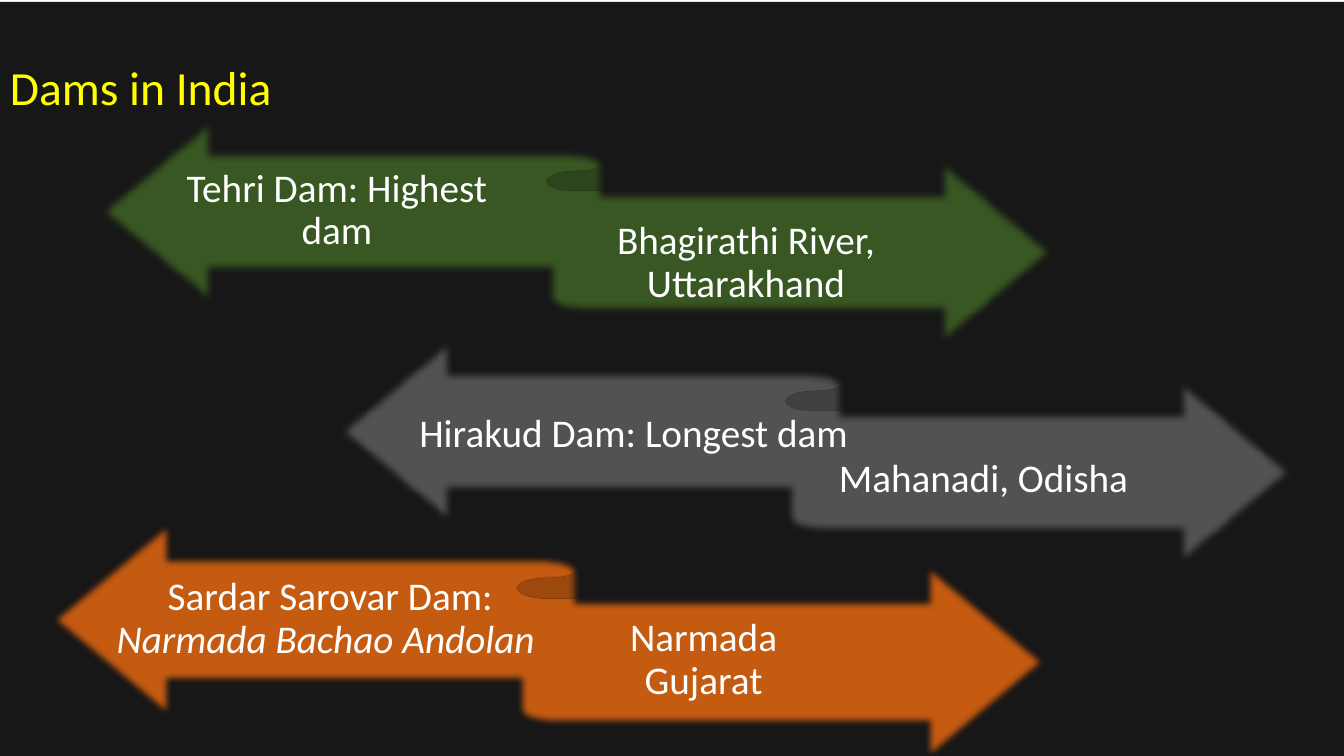
from lxml import etree
from pptx import Presentation
from pptx.dml.color import RGBColor
from pptx.enum import shapes, text
from pptx.oxml import ns
from pptx.util import Pt

COLOURS = {
    "background": "181717", "title": "FFFF00", "label": "FFFFFF",
    "green": "385723", "grey": "525252", "orange": "C55A11",
}


def add_filled_shape(kind, box, colour):
    shape = slide.shapes.add_shape(kind, *(Pt(value) for value in box))
    shape.shadow.inherit = False
    shape.fill.solid()
    shape.fill.fore_color.rgb = RGBColor.from_string(COLOURS[colour])
    shape.line.fill.background()
    return shape


def add_run(paragraph, words, size, colour, italic=False):
    run = paragraph.add_run()
    run.text = words
    run.font.name = "Calibri"
    run.font.size = Pt(size)
    run.font.italic = italic
    run.font.color.rgb = RGBColor.from_string(COLOURS[colour])


presentation = Presentation()
presentation.slide_width, presentation.slide_height = Pt(960), Pt(540)
slide = presentation.slides.add_slide(presentation.slide_layouts[6])

# Dark panel carrying the title
panel = add_filled_shape(shapes.MSO_SHAPE.RECTANGLE, (0, 1.44, 960, 540), "background")
frame = panel.text_frame
frame.word_wrap = True
frame.vertical_anchor = text.MSO_ANCHOR.TOP
frame.margin_top = Pt(44.4)
title = frame.paragraphs[0]
title.alignment = text.PP_ALIGN.LEFT
title.line_spacing = 0.9
add_run(title, "Dams in India", 34, "title")

# Each ribbon: colour, box, then labels as (box, runs of words and italic)
ribbons = [
    ("green", (66.2, 78.5, 690.5, 174.2), [
        ((106.6, 133.2, 268, 35.3), [("Tehri Dam: Highest dam", False)]),
        ((405.4, 145.4, 254.9, 85.7), [("Bhagirathi River, Uttarakhand", False)]),
    ]),
    ("grey", (236.9, 235.4, 690.5, 174.2), [
        ((293, 267.8, 319, 85.7), [("Hirakud Dam: Longest dam", False)]),
        ((563.8, 300.2, 283.7, 85.7), [("Mahanadi, Odisha ", False)]),
    ]),
    ("orange", (32.4, 367.2, 718.6, 181.4), [
        ((66.2, 398.2, 339.1, 88.6),
         [("Sardar Sarovar Dam: ", False), ("Narmada Bachao Andolan ", True)]),
        ((414, 427.7, 177.1, 88.6), [("Narmada Gujarat", False)]),
    ]),
]

for colour, ribbon_box, labels in ribbons:
    ribbon = add_filled_shape(shapes.MSO_SHAPE.LEFT_RIGHT_RIBBON, ribbon_box, colour)
    effects = ribbon.element.spPr.find(ns.qn("a:effectLst"))
    etree.SubElement(effects, ns.qn("a:softEdge"), rad=str(Pt(5)))

    for label_box, runs in labels:
        label = slide.shapes.add_textbox(*(Pt(value) for value in label_box))
        frame = label.text_frame
        frame.word_wrap = True
        frame.vertical_anchor = text.MSO_ANCHOR.MIDDLE
        frame.margin_left = frame.margin_right = 0
        frame.margin_top, frame.margin_bottom = Pt(8), Pt(8.5)
        paragraph = frame.paragraphs[0]
        paragraph.alignment = text.PP_ALIGN.CENTER
        paragraph.line_spacing = 0.9
        for words, italic in runs:
            add_run(paragraph, words, 28, "label", italic)

presentation.save("out.pptx")
